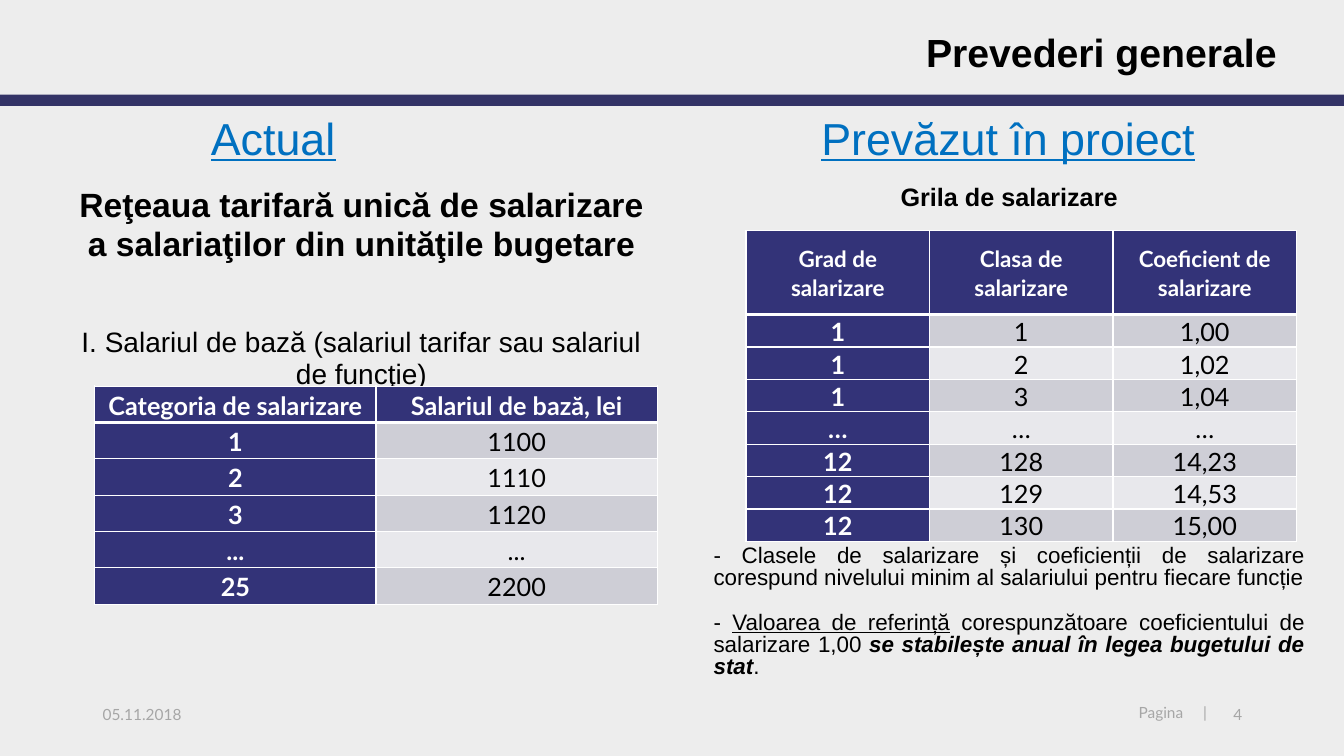
"""Build the slide that compares the current and the planned pay grids."""
from dataclasses import dataclass

from lxml.etree import SubElement
from pptx import Presentation
from pptx.dml.color import RGBColor
from pptx.enum.shapes import MSO_SHAPE as Shape
from pptx.enum.text import MSO_ANCHOR as Anchor, PP_ALIGN as Align
from pptx.oxml.ns import qn
from pptx.util import Emu, Inches, Pt


@dataclass(frozen=True)
class Theme:
    sans: str = "Arial"
    lato: str = "Lato"
    back: str = "EDEDED"
    bar: str = "333366"
    head: str = "333378"
    odd: str = "CECED6"
    even: str = "E8E8EC"
    white: str = "FFFFFF"
    black: str = "000000"
    blue: str = "0070C0"
    gray: str = "A6A6A6"
    title: int = 28
    label: int = 32
    lead: int = 24
    sub: int = 20
    cell: int = 18
    note: int = 16
    foot: int = 11


T = Theme()
WIDE, HIGH = Inches(13.33), Inches(7.5)
MID, LEFT, RIGHT, JUST = Align.CENTER, Align.LEFT, Align.RIGHT, Align.JUSTIFY

TITLE = "Prevederi generale"
LABELS = [
    ("Actual", (10.33, 14.53, 20, 8.13)),
    ("Prevăzut în proiect", (57.02, 14.53, 36, 8.13)),
]
LEAD = "Reţeaua tarifară unică de salarizare a salariaţilor din unităţile bugetare"
SUB = "I. Salariul de bază (salariul tarifar sau salariul de funcţie)"
GRID = "Grila de salarizare"
NOTES = [
    [("- Clasele de salarizare și coeficienții de salarizare corespund "
      "nivelului minim al salariului pentru fiecare funcție", "")],
    [("- ", ""), ("Valoarea de referință", "u"),
     (" corespunzătoare coeficientului de salarizare 1,00 ", ""),
     ("se stabilește anual în legea bugetului de stat", "bi"), (".", "")],
]
FEET = [
    ("05.11.2018", (6.9, 92.67, 22.5, 5.33), LEFT),
    ("Pagina", (82.38, 92.4, 8, 3.87), MID),
    ("|", (87.66, 92.4, 4, 3.87), MID),
    ("4", (90.1, 92.67, 3.08, 5.33), RIGHT),
]
NOW = [
    ("Categoria de salarizare", "Salariul de bază, lei"),
    ("1", "1100"), ("2", "1110"), ("3", "1120"), ("...", "..."), ("25", "2200"),
]
PLAN = [
    ("Grad de salarizare", "Clasa de salarizare", "Coeficient de salarizare"),
    ("1", "1", "1,00"), ("1", "2", "1,02"), ("1", "3", "1,04"),
    ("…", "…", "…"),
    ("12", "128", "14,23"), ("12", "129", "14,53"), ("12", "130", "15,00"),
]


def rgb(tone):
    return RGBColor.from_string(tone)


def place(x, y, w, h):
    return [Emu(round(part * side / 100))
            for part, side in ((x, WIDE), (y, HIGH), (w, WIDE), (h, HIGH))]


def style(para, size, tone=T.black, face=T.sans, bold=False, align=MID,
          line=1.0, before=0):
    para.alignment, para.line_spacing = align, line
    para.space_before = Pt(before)
    font = para.font
    font.name, font.size, font.bold = face, Pt(size), bold
    font.color.rgb = rgb(tone)


def write(para, runs):
    for text, marks in runs:
        run = para.add_run()
        run.text = text
        if "b" in marks:
            run.font.bold = True
        if "i" in marks:
            run.font.italic = True
        if "u" in marks:
            run.font.underline = True


def add_text(slide, area, paras, anchor=Anchor.TOP):
    frame = slide.shapes.add_textbox(*place(*area)).text_frame
    frame.word_wrap, frame.vertical_anchor = True, anchor
    for i, (runs, look) in enumerate(paras):
        para = frame.add_paragraph() if i else frame.paragraphs[0]
        write(para, runs)
        style(para, **look)


def edge(cell, top):
    props = cell._tc.get_or_add_tcPr()
    for i, side in enumerate("LRTB"):
        thick = 3 if top and side == "B" else 1
        line = SubElement(props, qn(f"a:ln{side}"), w=str(Pt(thick)))
        fill = SubElement(line, qn("a:solidFill"))
        SubElement(fill, qn("a:srgbClr"), val=T.white)
        props.remove(line)
        props.insert(i, line)


def add_grid(slide, area, rows, share, size, anchor, pad):
    box = place(*area)
    table = slide.shapes.add_table(len(rows), len(rows[0]), *box).table
    first = round(box[3] * share)
    rest = (box[3] - first) // (len(rows) - 1)
    for r, row in enumerate(rows):
        table.rows[r].height = Emu(rest if r else first)
        for c, text in enumerate(row):
            cell = table.cell(r, c)
            dark = r == 0 or c == 0
            cell.vertical_anchor = anchor
            cell.margin_left = cell.margin_right = Inches(pad[0])
            cell.margin_top = cell.margin_bottom = Inches(pad[1])
            cell.fill.solid()
            cell.fill.fore_color.rgb = rgb(
                T.head if dark else T.odd if r % 2 else T.even)
            edge(cell, r == 0)
            para = cell.text_frame.paragraphs[0]
            write(para, [(text, "")])
            style(para, T.cell if r else size, T.white if dark else T.black,
                  T.lato, dark, line=1.07)


def main():
    deck = Presentation()
    deck.slide_width, deck.slide_height = WIDE, HIGH
    slide = deck.slides.add_slide(deck.slide_layouts[5])
    slide.background.fill.solid()
    slide.background.fill.fore_color.rgb = rgb(T.back)

    bar = slide.shapes.add_shape(Shape.RECTANGLE, *place(0, 12.53, 100, 1.47))
    bar.shadow.inherit = False
    bar.fill.solid()
    bar.fill.fore_color.rgb = rgb(T.bar)
    bar.line.fill.background()

    head = slide.shapes.title
    head.left, head.top, head.width, head.height = place(47.49, 3.73, 48.24, 5.07)
    head.text_frame.vertical_anchor = Anchor.TOP
    head.text_frame.text = TITLE
    style(head.text_frame.paragraphs[0], T.title, bold=True, align=RIGHT, line=0.9)

    for text, area in LABELS:
        look = dict(size=T.label, tone=T.blue, line=0.9)
        add_text(slide, area, [([(text, "u")], look)], Anchor.MIDDLE)
    add_text(slide, (4.95, 24.13, 43.89, 27), [
        ([(LEAD, "")], dict(size=T.lead, bold=True, line=0.95)),
        ([(SUB, "")], dict(size=T.sub, line=0.95, before=45)),
    ])
    add_text(slide, (52.36, 24.13, 45.46, 5.33),
             [([(GRID, "")], dict(size=T.cell, bold=True, line=0.8))])
    add_text(slide, (52.36, 71.47, 45.46, 21.33), [
        (runs, dict(size=T.note, align=JUST, line=0.83, before=16 * i))
        for i, runs in enumerate(NOTES)])

    add_grid(slide, (7.05, 51.07, 41.86, 28.4), NOW, 1 / len(NOW), T.cell,
             Anchor.TOP, (0.03, 0.02))
    add_grid(slide, (55.51, 30.53, 40.96, 41.07), PLAN, 0.27, T.note,
             Anchor.MIDDLE, (0.07, 0))

    for text, area, align in FEET:
        look = dict(size=T.foot, tone=T.gray, face=T.lato, align=align)
        add_text(slide, area, [([(text, "")], look)])
    deck.save("out.pptx")


if __name__ == "__main__":
    main()
